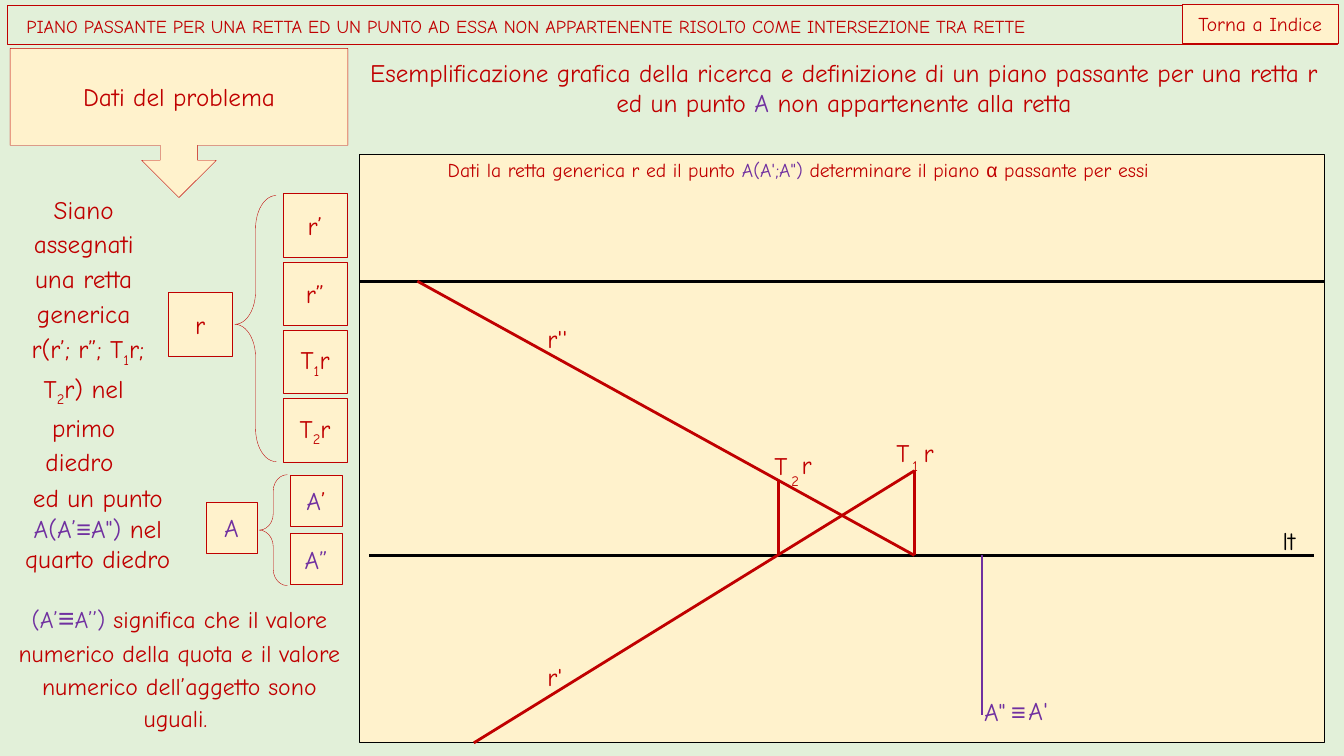
from lxml.etree import SubElement
from pptx import Presentation
from pptx.dml.color import RGBColor
from pptx.enum.shapes import MSO_CONNECTOR, MSO_SHAPE
from pptx.enum.text import MSO_ANCHOR, MSO_AUTO_SIZE, PP_ALIGN
from pptx.oxml.ns import qn
from pptx.util import Inches, Pt

RED, VIOLET, BLACK = "C00000", "7030A0", "000000"
CREAM, GREEN = "FFF2CC", "E2F0D9"
FACE, SIGN = "Comic Neue", "Arial"


def tint(code):
    return RGBColor.from_string(code)


def say(par, text, color=RED, size=18, font=FACE, sub=False):
    run = par.add_run()
    run.text = text
    run.font.size = Pt(size)
    run.font.name = font
    run.font.color.rgb = tint(color)
    if sub:
        run.font._element.set("baseline", "-25000")


def write(shape, pars, align=PP_ALIGN.CENTER, lead=None, after=None,
          anchor=MSO_ANCHOR.TOP, grow=False, wrap=True, inset=None):
    frame = shape.text_frame
    frame.word_wrap = wrap
    frame.vertical_anchor = anchor
    frame.auto_size = MSO_AUTO_SIZE.SHAPE_TO_FIT_TEXT if grow else MSO_AUTO_SIZE.NONE
    if inset is not None:
        frame.margin_left = frame.margin_right = Inches(inset)
        frame.margin_top = frame.margin_bottom = Inches(inset)
    for i, runs in enumerate(pars):
        par = frame.add_paragraph() if i else frame.paragraphs[0]
        par.alignment = align
        if lead:
            par.line_spacing = lead
        if after:
            par.space_after = Pt(after)
        for run in runs:
            say(par, **run)


def bit(text, color=RED, **look):
    return dict(text=text, color=color, **look)


def form(slide, kind, x, y, w, h, fill=CREAM, line=RED, width=0.25):
    shape = slide.shapes.add_shape(kind, Inches(x), Inches(y), Inches(w), Inches(h))
    shape.shadow.inherit = False
    if fill:
        shape.fill.solid()
        shape.fill.fore_color.rgb = tint(fill)
    else:
        shape.fill.background()
    if line:
        shape.line.color.rgb = tint(line)
        shape.line.width = Pt(width)
    else:
        shape.line.fill.background()
    return shape


def note(slide, x, y, w, h, pars, **look):
    box = slide.shapes.add_textbox(Inches(x), Inches(y), Inches(w), Inches(h))
    write(box, pars, grow=True, **look)


def stroke(slide, x1, y1, x2, y2, color):
    line = slide.shapes.add_connector(
        MSO_CONNECTOR.STRAIGHT, Inches(x1), Inches(y1), Inches(x2), Inches(y2))
    line.line.color.rgb = tint(color)
    line.line.width = Pt(0)
    SubElement(line._element.spPr, qn("a:effectLst"))


def tile(slide, x, y, side, runs):
    box = form(slide, MSO_SHAPE.RECTANGLE, x, y, side, side)
    write(box, [runs], after=10, anchor=MSO_ANCHOR.MIDDLE)


def brace(slide, x, y, w, h, curl, mid):
    shape = form(slide, MSO_SHAPE.LEFT_BRACE, x, y, w, h, fill=None)
    shape.adjustments[0] = curl
    shape.adjustments[1] = mid


def header(slide, x, y):
    bar = form(slide, MSO_SHAPE.RECTANGLE, x, y, 13.19, 0.39, fill=None)
    title = ("PIANO PASSANTE PER UNA RETTA ED UN PUNTO AD ESSA NON APPARTENENTE "
             "RISOLTO COME INTERSEZIONE TRA RETTE")
    write(bar, [[bit(" ", size=20), bit(title, size=13)]], align=PP_ALIGN.LEFT,
          lead=0.9, anchor=MSO_ANCHOR.MIDDLE)
    back = form(slide, MSO_SHAPE.RECTANGLE, x + 11.66, y - 0.01, 1.54, 0.39)
    write(back, [[bit("Torna a Indice", size=14)]], anchor=MSO_ANCHOR.MIDDLE, grow=True)
    note(slide, x + 3.38, y + 0.47, 9.84, 0.71, [[
        bit("Esemplificazione grafica della ricerca e definizione di un piano "
            "passante per una retta r ed un punto "),
        bit("A", VIOLET), bit(" non appartenente alla retta")]])


def trace(digit):
    return [bit("T"), bit(digit, sub=True), bit("r")]


def given(slide, x, y):
    call = form(slide, MSO_SHAPE.DOWN_ARROW_CALLOUT, x + 0.06, y, 3.35, 1.48)
    write(call, [[bit("Dati del problema")]], anchor=MSO_ANCHOR.MIDDLE)
    note(slide, x + 0.02, y + 1.35, 1.54, 2.87, [
        [bit("Siano assegnati una retta generica")],
        [bit(" r(r’; r”; T"), bit("1", sub=True), bit("r; T"),
         bit("2", sub=True), bit("r) nel primo diedro ")]], lead=1.15)
    tile(slide, x + 1.63, y + 2.42, 0.63, [bit("r")])
    parts = [[bit("r’")], [bit("r”")], trace("1"), trace("2")]
    for i, runs in enumerate(parts):
        tile(slide, x + 2.77, y + 1.44 + i * 0.677, 0.63, runs)
    brace(slide, x + 2.29, y + 1.46, 0.41, 2.64, 0.797, 0.484)

    note(slide, x + 0.02, y + 4.26, 1.82, 1.01, [[
        bit("ed un punto "), bit("A(A’", VIOLET), bit("≡", VIOLET, font=SIGN),
        bit("A\")", VIOLET), bit(" nel quarto diedro")]])
    brace(slide, x + 2.53, y + 4.23, 0.28, 1.1, 0.579, 0.5)
    tile(slide, x + 2, y + 4.5, 0.51, [bit("A", VIOLET)])
    for i, runs in enumerate([[bit("A", VIOLET), bit("’")], [bit("A”", VIOLET)]]):
        tile(slide, x + 2.84, y + 4.23 + i * 0.58, 0.51, runs)

    note(slide, x, y + 5.38, 3.48, 1.45, [[
        bit("(A’", VIOLET, size=17), bit("≡", VIOLET, size=20, font=SIGN),
        bit("A’’) ", VIOLET, size=17),
        bit("significa che il valore numerico della quota e il valore numerico "
            "dell’aggetto sono uguali. ", size=17)]], lead=1.15)


def drawing(slide, x, y, w, h):
    form(slide, MSO_SHAPE.RECTANGLE, x, y, w, h, line=BLACK, width=0)
    ground, top = 3.98, 1.26
    first, second, point = 5.5, 4.15, 6.17
    labels = [
        (4.11, 2.94, 0.17, 0.3, bit("T")),
        (4.28, 2.98, 0.1, 0.2, bit("2", sub=True)),
        (4.38, 2.93, 0.12, 0.3, bit("r")),
        (1.86, 5.03, 0.22, 0.3, bit("r'")),
        (1.86, 1.68, 0.32, 0.3, bit("r''")),
        (6.63, 5.37, 0.28, 0.3, bit("A'", VIOLET)),
        (6.19, 5.38, 0.29, 0.3, bit("A\"", VIOLET)),
        (6.46, 5.38, 0.14, 0.3, bit("≡", VIOLET, font=SIGN)),
        (5.32, 2.81, 0.17, 0.19, bit("T")),
        (5.48, 2.84, 0.08, 0.13, bit("1", sub=True)),
        (5.59, 2.81, 0.08, 0.19, bit("r")),
        (9.15, 3.68, 0.29, 0.24, bit("lt", BLACK)),
    ]
    for dx, dy, wide, high, run in labels:
        box = form(slide, MSO_SHAPE.RECTANGLE, x + dx, y + dy, wide, high, line=None)
        write(box, [[run]], align=PP_ALIGN.LEFT, grow=True, wrap=False, inset=0)
    lines = [
        (0, top, w, top, BLACK),
        (0.09, ground, 9.46, ground, BLACK),
        (0.57, top, first, ground, RED),
        (1.13, h, first, 3.14, RED),
        (second, ground, second, 3.23, RED),
        (first, ground, first, 3.14, RED),
        (point, 5.56, point, ground, VIOLET),
    ]
    for x1, y1, x2, y2, color in lines:
        stroke(slide, x + x1, y + y1, x + x2, y + y2, color)
    note(slide, x + 0.87, y + 0.04, 7.81, 0.24, [[
        bit("Dati la retta generica r ed il punto ", size=14),
        bit("A(A';A\") ", VIOLET, size=14), bit("determinare il piano ", size=14),
        bit("α", size=14, font=SIGN), bit(" passante per essi", size=14)]],
        align=PP_ALIGN.LEFT, inset=0)


def main():
    deck = Presentation()
    deck.slide_width, deck.slide_height = Inches(13.33), Inches(7.5)
    slide = deck.slides.add_slide(deck.slide_layouts[6])
    slide.background.fill.solid()
    slide.background.fill.fore_color.rgb = tint(GREEN)
    header(slide, 0.07, 0.05)
    given(slide, 0.04, 0.48)
    drawing(slide, 3.57, 1.53, 9.57, 5.84)
    deck.save("out.pptx")


if __name__ == "__main__":
    main()
